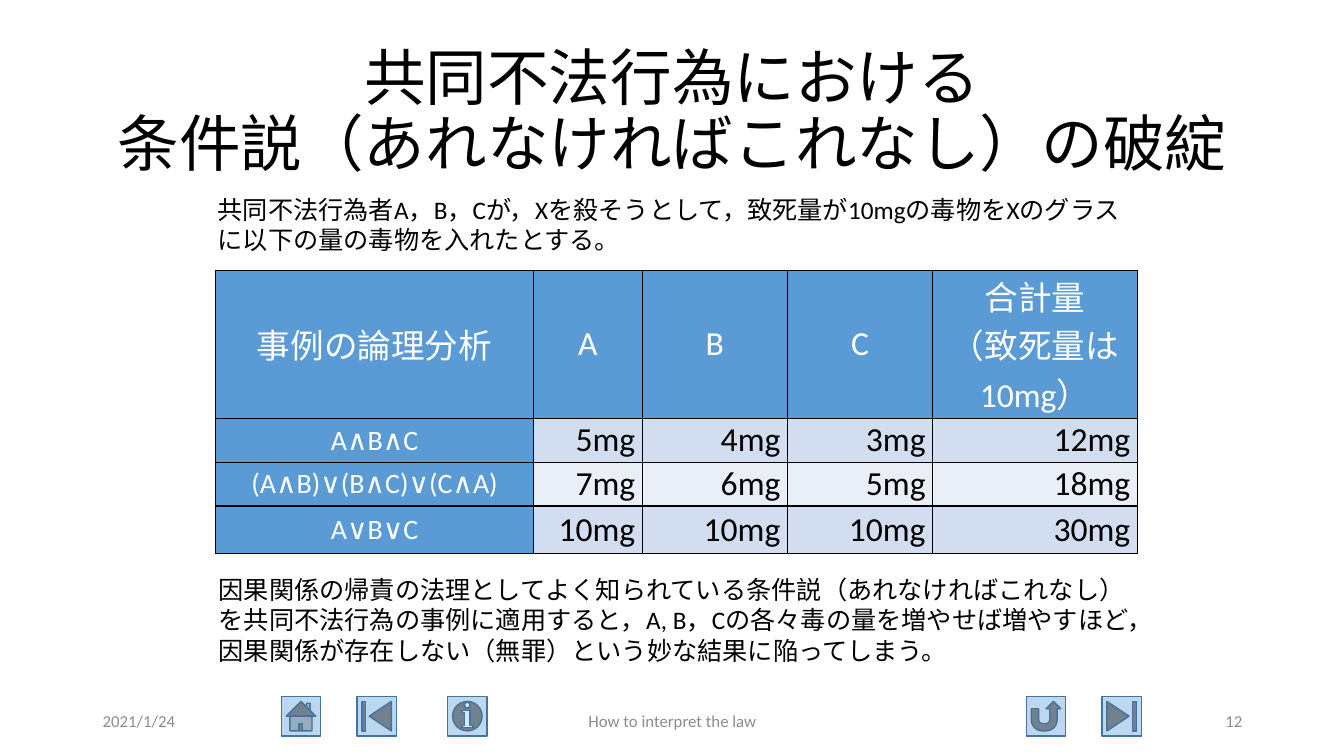
from typing import NamedTuple

import lxml.etree
import pptx
import pptx.dml.color
import pptx.enum.shapes
import pptx.enum.text
import pptx.oxml.ns
import pptx.slide
import pptx.table
import pptx.text.text
import pptx.util

Inches = pptx.util.Inches
Pt = pptx.util.Pt
RGBColor = pptx.dml.color.RGBColor
Align = pptx.enum.text.PP_ALIGN
Anchor = pptx.enum.text.MSO_ANCHOR
Shape = pptx.enum.shapes.MSO_SHAPE
qn = pptx.oxml.ns.qn

BLACK = RGBColor(0x00, 0x00, 0x00)
WHITE = RGBColor(0xFF, 0xFF, 0xFF)
FOOTER_GRAY = RGBColor(0x8C, 0x8C, 0x8C)
HEADER_BLUE = RGBColor(0x5B, 0x9B, 0xD5)
BAND_DARK = RGBColor(0xD2, 0xDE, 0xEF)
BAND_LIGHT = RGBColor(0xEA, 0xEF, 0xF7)
BUTTON_FILL = RGBColor(0xBD, 0xD7, 0xEE)
BUTTON_LINE = RGBColor(0x43, 0x73, 0x9E)
FONT = "Calibri"


class TextBlock(NamedTuple):
    text: str
    left: float
    top: float
    width: float
    height: float
    size: int
    color: RGBColor = BLACK
    align: Align = Align.LEFT
    anchor: Anchor = Anchor.TOP
    line_spacing: float = 1.0


class NavigationButton(NamedTuple):
    symbol: Shape
    left: float


TEXT_BLOCKS = [
    TextBlock("共同不法行為における\n条件説（あれなければこれなし）の破綻",
              0.92, 0.4, 11.5, 1.45, 44, BLACK, Align.CENTER, Anchor.MIDDLE, 0.9),
    TextBlock("共同不法行為者A，B，Cが，Xを殺そうとして，致死量が10mgの毒物をXの"
              "グラスに以下の量の毒物を入れたとする。", 2.06, 1.88, 9.29, 0.71, 18),
    TextBlock("因果関係の帰責の法理としてよく知られている条件説（あれなければこれなし）"
              "を共同不法行為の事例に適用すると，A, B，Cの各々毒の量を増やせば増やすほ"
              "ど，因果関係が存在しない（無罪）という妙な結果に陥ってしまう。",
              2.07, 5.65, 9.27, 1.01, 18),
    TextBlock("2021/1/24", 0.92, 6.95, 3, 0.4, 12, FOOTER_GRAY, Align.LEFT, Anchor.MIDDLE),
    TextBlock("How to interpret the law", 4.42, 6.95, 4.5, 0.4, 12, FOOTER_GRAY,
              Align.CENTER, Anchor.MIDDLE),
    TextBlock("12", 9.42, 6.95, 3, 0.4, 12, FOOTER_GRAY, Align.RIGHT, Anchor.MIDDLE),
]

BUTTON_TOP = 6.91
BUTTON_SIZE = 0.39
BUTTONS = [
    NavigationButton(Shape.ACTION_BUTTON_HOME, 2.79),
    NavigationButton(Shape.ACTION_BUTTON_BEGINNING, 3.54),
    NavigationButton(Shape.ACTION_BUTTON_INFORMATION, 4.44),
    NavigationButton(Shape.ACTION_BUTTON_RETURN, 10.18),
    NavigationButton(Shape.ACTION_BUTTON_END, 10.93),
]

DOSES = [
    ["事例の論理分析", "A", "B", "C", "合計量\n（致死量は\n10mg）"],
    ["A∧B∧C", "5mg", "4mg", "3mg", "12mg"],
    ["(A∧B)∨(B∧C)∨(C∧A)", "7mg", "6mg", "5mg", "18mg"],
    ["A∨B∨C", "10mg", "10mg", "10mg", "30mg"],
]
COLUMN_WIDTHS = [3.15, 1.08, 1.44, 1.44, 2.03]
ROW_HEIGHTS = [1.47, 0.44, 0.43, 0.47]


def write_lines(paragraph: pptx.text.text._Paragraph, text: str, size: int,
                color: RGBColor, align: Align) -> None:
    """Fill one paragraph, with a line break at each newline."""
    paragraph.alignment = align
    for index, line in enumerate(text.split("\n")):
        if index:
            paragraph.add_line_break()
        run = paragraph.add_run()
        run.text = line
        run.font.name = FONT
        run.font.size = Pt(size)
        run.font.color.rgb = color


def add_text_block(slide: pptx.slide.Slide, block: TextBlock) -> None:
    box = slide.shapes.add_textbox(Inches(block.left), Inches(block.top),
                                   Inches(block.width), Inches(block.height))
    frame = box.text_frame
    frame.word_wrap = True
    frame.vertical_anchor = block.anchor
    paragraph = frame.paragraphs[0]
    paragraph.line_spacing = block.line_spacing
    write_lines(paragraph, block.text, block.size, block.color, block.align)


def add_button(slide: pptx.slide.Slide, button: NavigationButton) -> None:
    icon = slide.shapes.add_shape(button.symbol, Inches(button.left), Inches(BUTTON_TOP),
                                  Inches(BUTTON_SIZE), Inches(BUTTON_SIZE))
    icon.shadow.inherit = False
    icon.fill.solid()
    icon.fill.fore_color.rgb = BUTTON_FILL
    icon.line.color.rgb = BUTTON_LINE
    icon.line.width = Pt(1)


def add_borders(cell: pptx.table._Cell) -> None:
    properties = cell._tc.get_or_add_tcPr()
    for edge in ("a:lnL", "a:lnR", "a:lnT", "a:lnB"):
        border = lxml.etree.SubElement(properties, qn(edge), w=str(Pt(1)))
        fill = lxml.etree.SubElement(border, qn("a:solidFill"))
        lxml.etree.SubElement(fill, qn("a:srgbClr"), val=str(BLACK))


def fill_cell(cell: pptx.table._Cell, text: str, row: int, column: int) -> None:
    is_heading = row == 0 or column == 0
    band = BAND_DARK if row % 2 else BAND_LIGHT
    add_borders(cell)
    cell.fill.solid()
    cell.fill.fore_color.rgb = HEADER_BLUE if is_heading else band
    cell.margin_left = cell.margin_right = Inches(0.07)
    cell.margin_top = cell.margin_bottom = 0
    cell.vertical_anchor = Anchor.MIDDLE
    write_lines(cell.text_frame.paragraphs[0], text,
                20 if row and column == 0 else 24,
                WHITE if is_heading else BLACK,
                Align.CENTER if is_heading else Align.RIGHT)


def add_dose_table(slide: pptx.slide.Slide) -> None:
    table = slide.shapes.add_table(
        len(ROW_HEIGHTS), len(COLUMN_WIDTHS), Inches(2.14), Inches(2.68),
        Inches(sum(COLUMN_WIDTHS)), Inches(sum(ROW_HEIGHTS))).table
    for column, width in zip(table.columns, COLUMN_WIDTHS):
        column.width = Inches(width)
    for row, height in zip(table.rows, ROW_HEIGHTS):
        row.height = Inches(height)
    for row_index, texts in enumerate(DOSES):
        for column_index, text in enumerate(texts):
            fill_cell(table.cell(row_index, column_index), text, row_index, column_index)


def main() -> None:
    presentation = pptx.Presentation()
    presentation.slide_width = Inches(13.33)
    presentation.slide_height = Inches(7.5)
    slide = presentation.slides.add_slide(presentation.slide_layouts[6])
    for button in BUTTONS:
        add_button(slide, button)
    for block in TEXT_BLOCKS:
        add_text_block(slide, block)
    add_dose_table(slide)
    presentation.save("out.pptx")


if __name__ == "__main__":
    main()
